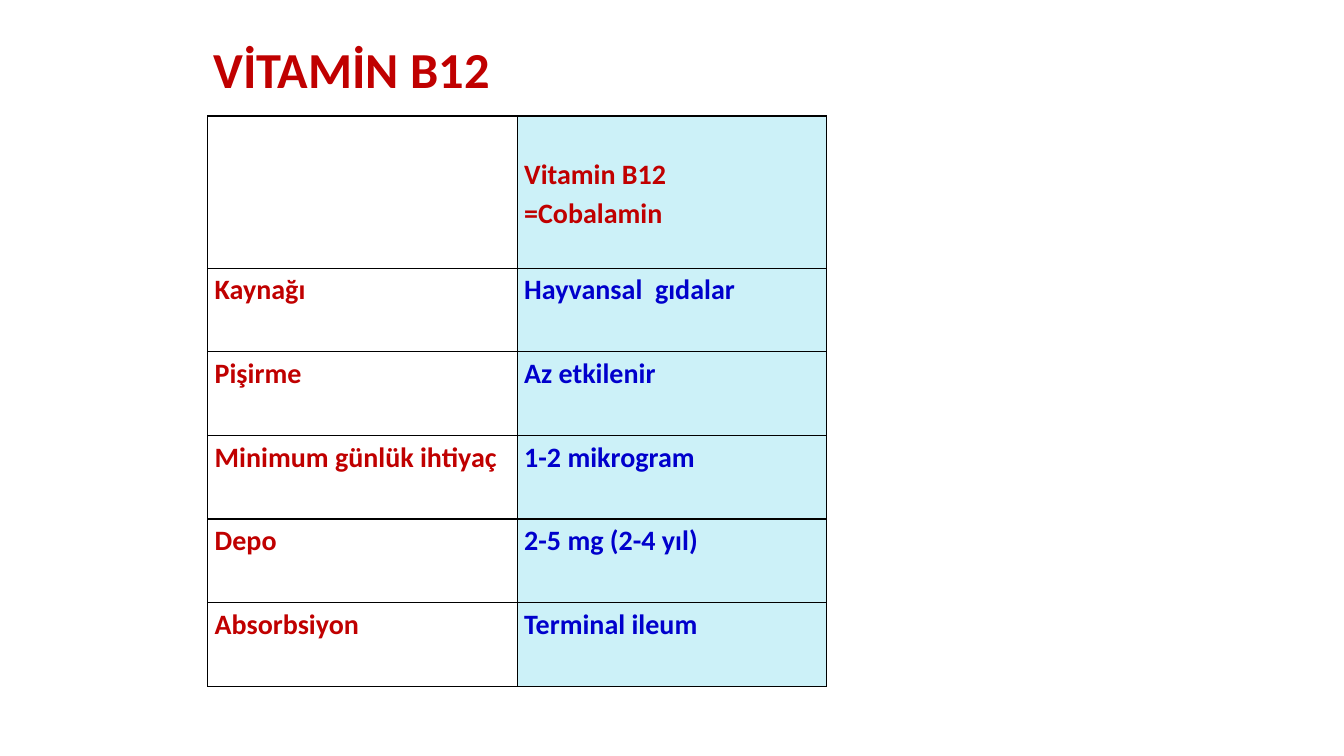
from dataclasses import dataclass

from lxml import etree
from pptx import Presentation
from pptx import util as u
from pptx.dml.color import RGBColor
from pptx.enum import text
from pptx.oxml.ns import qn


@dataclass(frozen=True)
class Theme:
    font: str = "Calibri"
    red: str = "C00000"
    blue: str = "0000CC"
    pale_blue: str = "CCF1F8"
    border: str = "000000"
    title_size: int = 36
    cell_size: int = 20
    cell_spacing: float = 1.15
    border_width: int = 1


theme = Theme()


def write(frame, content, *, size, color, spacing=1.0):
    frame.word_wrap = True
    frame.text = content
    for paragraph in frame.paragraphs:
        paragraph.line_spacing = spacing
        paragraph.font.size = u.Pt(size)
        for run in paragraph.runs:
            run.font.name = theme.font
            run.font.size = u.Pt(size)
            run.font.bold = True
            run.font.color.rgb = RGBColor.from_string(color)


def outline(cell):
    properties = cell._tc.get_or_add_tcPr()
    for position, side in enumerate(("a:lnL", "a:lnR", "a:lnT", "a:lnB")):
        line = etree.Element(qn(side), w=str(u.Pt(theme.border_width)))
        fill = etree.SubElement(line, qn("a:solidFill"))
        etree.SubElement(fill, qn("a:srgbClr"), val=theme.border)
        properties.insert(position, line)


rows = [
    ("", "Vitamin B12\n=Cobalamin"),
    ("Kaynağı", "Hayvansal  gıdalar"),
    ("Pişirme", "Az etkilenir"),
    ("Minimum günlük ihtiyaç", "1-2 mikrogram"),
    ("Depo", "2-5 mg (2-4 yıl)"),
    ("Absorbsiyon", "Terminal ileum"),
]
column_width = u.Inches(3.07)
header_height = u.Inches(1.51)
row_height = u.Inches(0.83)

presentation = Presentation()
presentation.slide_width = u.Inches(13.33)
presentation.slide_height = u.Inches(7.5)
slide = presentation.slides.add_slide(presentation.slide_layouts[6])

table_shape = slide.shapes.add_table(
    len(rows), 2, u.Inches(2.06), u.Inches(1.15),
    2 * column_width, header_height + (len(rows) - 1) * row_height,
)
table = table_shape.table
table.first_row = False
table.horz_banding = False
for column in table.columns:
    column.width = column_width

for row_index, values in enumerate(rows):
    is_header = row_index == 0
    table.rows[row_index].height = header_height if is_header else row_height
    for column_index, value in enumerate(values):
        is_value = column_index == 1
        cell = table.cell(row_index, column_index)
        cell.margin_left = cell.margin_right = u.Inches(0.07)
        cell.margin_top = cell.margin_bottom = 0
        cell.vertical_anchor = text.MSO_ANCHOR.MIDDLE if is_header else text.MSO_ANCHOR.TOP
        if is_value:
            cell.fill.solid()
            cell.fill.fore_color.rgb = RGBColor.from_string(theme.pale_blue)
        else:
            cell.fill.background()
        outline(cell)
        write(
            cell.text_frame, value, size=theme.cell_size, spacing=theme.cell_spacing,
            color=theme.blue if is_value and not is_header else theme.red,
        )

title = slide.shapes.add_textbox(u.Inches(2.02), u.Inches(0.33), u.Inches(8.9), u.Inches(0.71))
write(title.text_frame, "VİTAMİN B12", size=theme.title_size, color=theme.red)

presentation.save("out.pptx")
